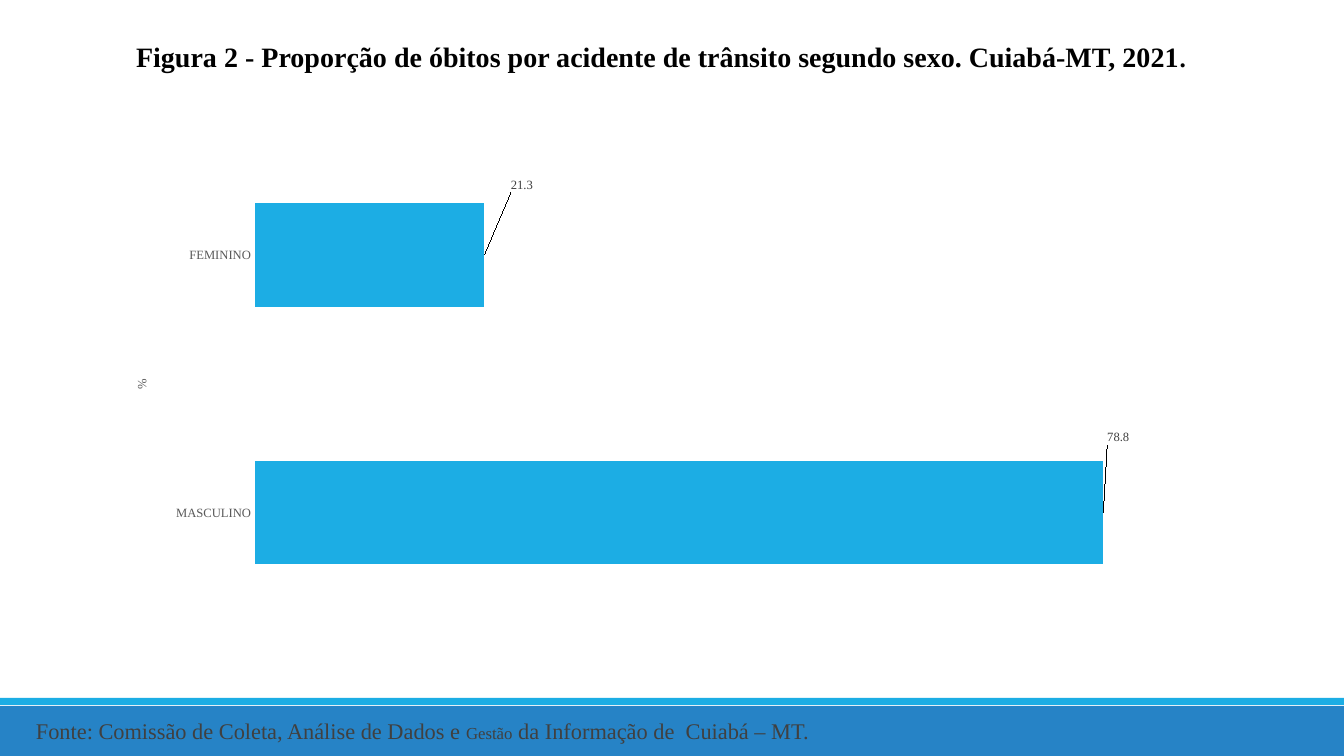
"""Slide with a bar chart of traffic deaths by sex, Cuiabá-MT, 2021."""
from lxml import etree
from pptx import Presentation
from pptx.chart import data as chart_data
from pptx.dml import color
from pptx.enum import chart as kinds, shapes, text
from pptx.oxml import ns
from pptx.util import Emu, Pt

PX = 914400 * 10 // 1008
THEME = {
    "font": "Times New Roman",
    "band": "2683C6", "accent": "1CADE4",
    "title": "000000", "body": "404040", "axis": "595959",
    "title_size": 20, "stop_size": 18, "source_size": 16, "small_size": 12, "chart_size": 9,
}


def style(font, size, tint, bold=False):
    for name, value in {"name": THEME["font"], "size": Pt(THEME[size]), "bold": bold}.items():
        setattr(font, name, value)
    font.color.rgb = color.RGBColor.from_string(THEME[tint])


def add_layout(parent, position, **values):
    layout = etree.Element(ns.qn("c:layout"))
    manual = etree.SubElement(layout, ns.qn("c:manualLayout"))
    for name, value in values.items():
        etree.SubElement(manual, ns.qn("c:" + name)).set("val", str(value))
    for existing in parent.findall(ns.qn("c:layout")):
        parent.remove(existing)
    parent.insert(position, layout)


deck = Presentation()
deck.slide_width, deck.slide_height = Emu(1344 * PX), Emu(756 * PX)
page = deck.slides.add_slide(deck.slide_layouts[6])

for top, height, tint in [(706, 50, "band"), (698, 7, "accent")]:
    band = page.shapes.add_shape(
        shapes.MSO_SHAPE.RECTANGLE, 0, top * PX, deck.slide_width, height * PX)
    band.shadow.inherit = False
    band.fill.solid()
    band.fill.fore_color.rgb = color.RGBColor.from_string(THEME[tint])
    band.line.fill.background()

captions = [
    ((29, 40, 1264, 108), text.PP_ALIGN.CENTER, 0.85, "title", True, [
        ("Figura 2 - Proporção de óbitos por acidente de trânsito segundo sexo. Cuiabá-MT, 2021",
         "title_size"),
        (".", "stop_size")]),
    ((26, 712, 1317, 37), text.PP_ALIGN.LEFT, 1.0, "body", False, [
        ("Fonte: Comissão de Coleta, Análise de Dados e ", "source_size"),
        ("Gestão", "small_size"),
        (" da Informação de  Cuiabá – MT.", "source_size")]),
]
for place, alignment, spacing, tint, bold, spans in captions:
    box = page.shapes.add_textbox(*(length * PX for length in place))
    box.text_frame.word_wrap = True
    para = box.text_frame.paragraphs[0]
    para.alignment, para.line_spacing = alignment, spacing
    for words, size in spans:
        span = para.add_run()
        span.text = words
        style(span.font, size, tint, bold)

deaths = chart_data.CategoryChartData(number_format="0.0")
deaths.categories = ["MASCULINO", "FEMININO"]
deaths.add_series("Series 1", [78.8, 21.3])
chart = page.shapes.add_chart(
    kinds.XL_CHART_TYPE.BAR_CLUSTERED, 114 * PX, 116 * PX, 1133 * PX, 537 * PX, deaths).chart
chart.has_legend = chart.has_title = False
style(chart.font, "chart_size", "axis")

sexes = chart.category_axis
sexes.major_tick_mark = kinds.XL_TICK_MARK.NONE
sexes.format.line.fill.background()
style(sexes.tick_labels.font, "chart_size", "axis")
unit = sexes.axis_title.text_frame.paragraphs[0].add_run()
unit.text = "%"
style(unit.font, "chart_size", "axis")

scale = chart.value_axis
for name, value in {"minimum_scale": 0, "maximum_scale": 90,
                    "has_major_gridlines": False, "visible": False}.items():
    setattr(scale, name, value)

plot = chart.plots[0]
plot.gap_width, plot.vary_by_categories = 150, False
series = plot.series[0]
series.format.fill.solid()
series.format.fill.fore_color.rgb = color.RGBColor.from_string(THEME["accent"])
labels = series.data_labels
labels.show_value, labels.number_format, labels.number_format_is_linked = True, "0.0", False
style(labels.font, "chart_size", "body")
for index, (across, down) in enumerate([(0, -0.14), (0.02, -0.13)]):
    label = series.points[index].data_label
    style(label.font, "chart_size", "body")
    label.position = kinds.XL_LABEL_POSITION.OUTSIDE_END
    add_layout(labels._element.findall(ns.qn("c:dLbl"))[index], 1, x=across, y=down)

add_layout(chart._chartSpace.chart.plotArea, 0, layoutTarget="inner", xMode="edge", yMode="edge",
           x=round(141 / 1133, 4), y=round(10 / 537, 4),
           w=round(969 / 1133, 4), h=round(516 / 537, 4))

deck.save("out.pptx")
